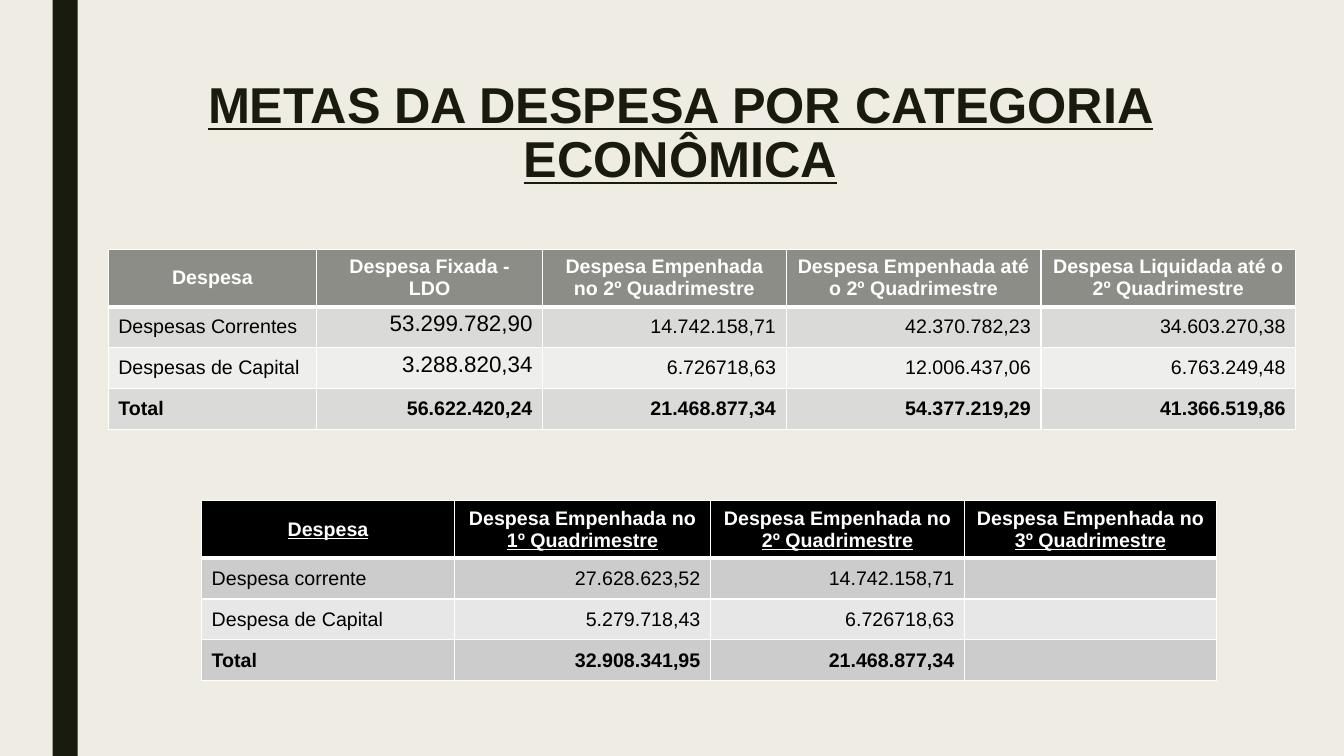
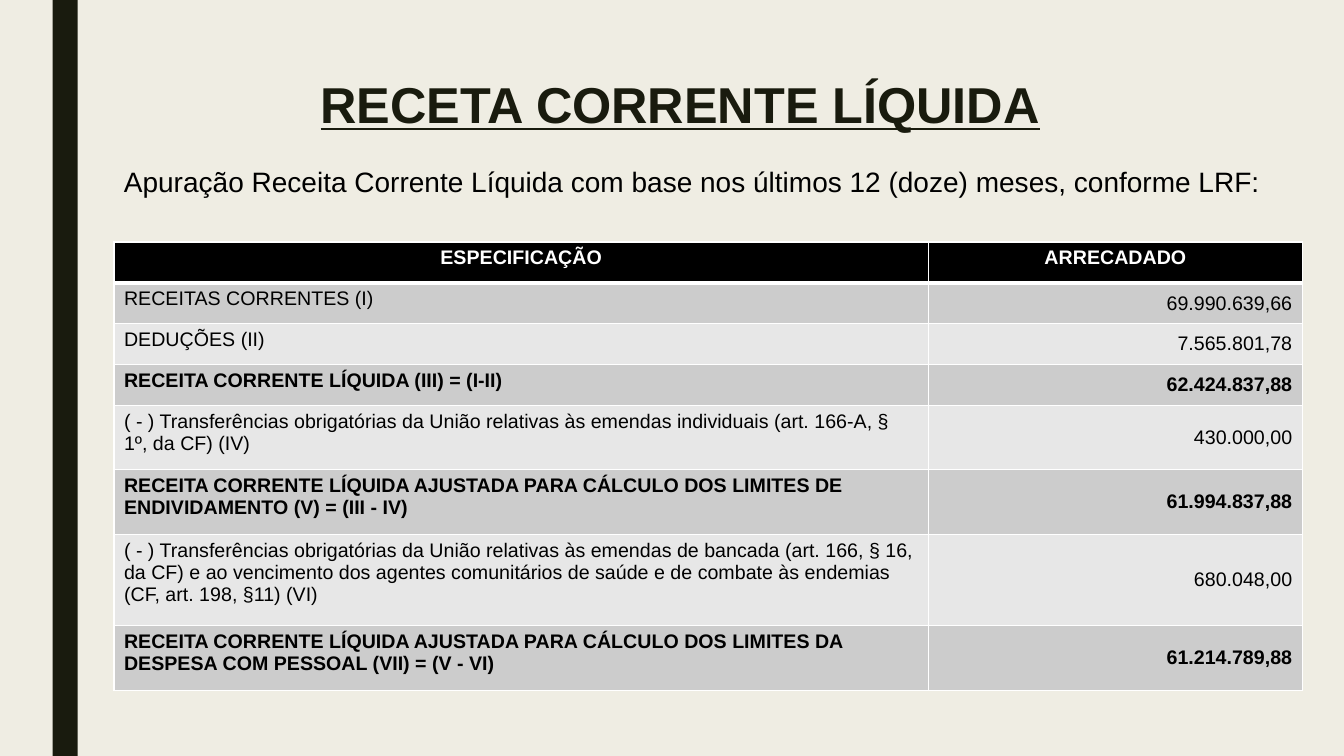
from lxml import etree
from pptx import Presentation
from pptx.dml.color import RGBColor
from pptx.enum import shapes, text
from pptx.oxml import ns
from pptx.util import Pt

FONT = "Arial"
PAPER, INK, BLACK, WHITE = "EFEDE3", "191B0E", "000000", "FFFFFF"
GREY_TABLE = ("8C8D86", "DADBD9", "EEEEED")  # header, odd rows, even rows
BLACK_TABLE = (BLACK, "CCCCCC", "E7E7E7")
ROW, TWO_LINES, THREE_LINES = 29.2, 46, 65.5
HEADER = 38.5
LEFT, CENTER, RIGHT = text.PP_ALIGN.LEFT, text.PP_ALIGN.CENTER, text.PP_ALIGN.RIGHT
TOP, MIDDLE = text.MSO_ANCHOR.TOP, text.MSO_ANCHOR.MIDDLE


def write(frame, content, size, color, align, bold=False, underline=False):
    """Fill the first paragraph; a tuple holds a plain and an underlined run."""
    frame.word_wrap = True
    paragraph = frame.paragraphs[0]
    paragraph.alignment = align
    plain, underlined = content if isinstance(content, tuple) else (content, "")
    for words, line in ((plain, underline), (underlined, True)):
        if words:
            run = paragraph.add_run()
            run.text = words
            run.font.name = FONT
            run.font.size = Pt(size)
            run.font.bold = bold
            run.font.underline = line
            run.font.color.rgb = RGBColor.from_string(color)
    return paragraph


def add_table(slide, left, top, widths, heights, colors, rows, bold_rows, top_cells=(), large_cells=()):
    """Add a banded table with white rules; top_cells are anchored at the top."""
    shape = slide.shapes.add_table(len(rows), len(widths), Pt(left), Pt(top),
                                   Pt(sum(widths)), Pt(sum(heights)))
    table = shape.table
    table.first_row = table.horz_banding = False
    for column, width in zip(table.columns, widths):
        column.width = Pt(width)
    for r, (values, height) in enumerate(zip(rows, heights)):
        table.rows[r].height = Pt(height)
        fill = colors[0] if r == 0 else colors[1 if r % 2 else 2]
        for c, value in enumerate(values):
            cell = table.cell(r, c)
            cell.fill.solid()
            cell.fill.fore_color.rgb = RGBColor.from_string(fill)
            cell.vertical_anchor = TOP if (r, c) in top_cells else MIDDLE
            align = CENTER if r == 0 else RIGHT if c else LEFT
            write(cell.text_frame, value, 16 if (r, c) in large_cells else 14,
                  WHITE if r == 0 else BLACK, align, r == 0 or r in bold_rows)
            rules = (("lnL", 1), ("lnR", 1), ("lnT", 3 if r == 1 else 1), ("lnB", 3 if r == 0 else 1))
            properties = cell._tc.get_or_add_tcPr()
            for position, (side, weight) in enumerate(rules):
                border = etree.Element(ns.qn("a:" + side), w=str(Pt(weight)))
                solid = etree.SubElement(border, ns.qn("a:solidFill"))
                etree.SubElement(solid, ns.qn("a:srgbClr"), val=WHITE)
                properties.insert(position, border)


presentation = Presentation()
presentation.slide_width, presentation.slide_height = Pt(960), Pt(540)
background = presentation.slide_master.background.fill
background.solid()
background.fore_color.rgb = RGBColor.from_string(PAPER)

# Shared side band and title
slides = []
for title, title_height in (("METAS DA DESPESA POR CATEGORIA ECONÔMICA", 116.6),
                            ("RECETA CORRENTE LÍQUIDA", 55.4)):
    slide = presentation.slides.add_slide(presentation.slide_layouts[6])
    band = slide.shapes.add_shape(shapes.MSO_SHAPE.RECTANGLE, Pt(37.5), 0, Pt(18), Pt(540))
    band.shadow.inherit = False
    band.fill.solid()
    band.fill.fore_color.rgb = RGBColor.from_string(INK)
    band.line.fill.background()
    heading = slide.shapes.add_textbox(Pt(108), Pt(54), Pt(756), Pt(title_height))
    write(heading.text_frame, title, 36, INK, CENTER, True, True).line_spacing = 0.89
    slides.append(slide)
expenses, revenue = slides

# Expenses by economic category
add_table(
    expenses, 77.3, 178.2, (149, 161.3, 174, 182, 182), (HEADER, ROW, ROW, ROW), GREY_TABLE,
    (
        ("Despesa", "Despesa Fixada - LDO", "Despesa Empenhada no 2º Quadrimestre",
         "Despesa Empenhada até o 2º Quadrimestre", "Despesa Liquidada até o 2º Quadrimestre"),
        ("Despesas Correntes", "53.299.782,90", "14.742.158,71", "42.370.782,23", "34.603.270,38"),
        ("Despesas de Capital", "3.288.820,34", "6.726718,63", "12.006.437,06", "6.763.249,48"),
        ("Total", "56.622.420,24", "21.468.877,34", "54.377.219,29", "41.366.519,86"),
    ),
    bold_rows=(3,), top_cells=((1, 1), (2, 1)), large_cells=((1, 1), (2, 1)))
quarters = [("Despesa Empenhada no ", f"{number}º Quadrimestre") for number in (1, 2, 3)]
add_table(
    expenses, 144, 357.8, (180.7, 182.9, 181.4, 180), (HEADER, ROW, ROW, ROW), BLACK_TABLE,
    (
        (("", "Despesa"), *quarters),
        ("Despesa corrente", "27.628.623,52", "14.742.158,71", ""),
        ("Despesa de Capital", "5.279.718,43", "6.726718,63", ""),
        ("Total", "32.908.341,95", "21.468.877,34", ""),
    ),
    bold_rows=(3,))

# Net current revenue
note = revenue.shapes.add_textbox(Pt(81.4), Pt(116), Pt(830), Pt(46))
write(note.text_frame,
      "Apuração Receita Corrente Líquida com base nos últimos 12 (doze) meses, conforme LRF:",
      20, BLACK, LEFT).line_spacing = 0.94
revenue_rows = (
    ("ESPECIFICAÇÃO", "ARRECADADO"),
    ("RECEITAS CORRENTES (I)", "69.990.639,66"),
    ("DEDUÇÕES (II)", "7.565.801,78"),
    ("RECEITA CORRENTE LÍQUIDA (III) = (I-II)", "62.424.837,88"),
    ("( - ) Transferências obrigatórias da União relativas às emendas individuais "
     "(art. 166-A, § 1º, da CF) (IV)", "430.000,00"),
    ("RECEITA CORRENTE LÍQUIDA AJUSTADA PARA CÁLCULO DOS LIMITES DE ENDIVIDAMENTO "
     "(V) = (III - IV)", "61.994.837,88"),
    ("( - ) Transferências obrigatórias da União relativas às emendas de bancada "
     "(art. 166, § 16, da CF) e ao vencimento dos agentes comunitários de saúde e de "
     "combate às endemias (CF, art. 198, §11) (VI)", "680.048,00"),
    ("RECEITA CORRENTE LÍQUIDA AJUSTADA PARA CÁLCULO DOS LIMITES DA DESPESA COM PESSOAL "
     "(VII) = (V - VI)", "61.214.789,88"),
)
add_table(
    revenue, 81.4, 172.8, (581.8, 267.1),
    (ROW, ROW, ROW, ROW, TWO_LINES, TWO_LINES, THREE_LINES, TWO_LINES), BLACK_TABLE, revenue_rows,
    bold_rows=(3, 5, 7),
    top_cells=[(0, 1)] + [(row, 0) for row in range(len(revenue_rows))])

presentation.save("out.pptx")
